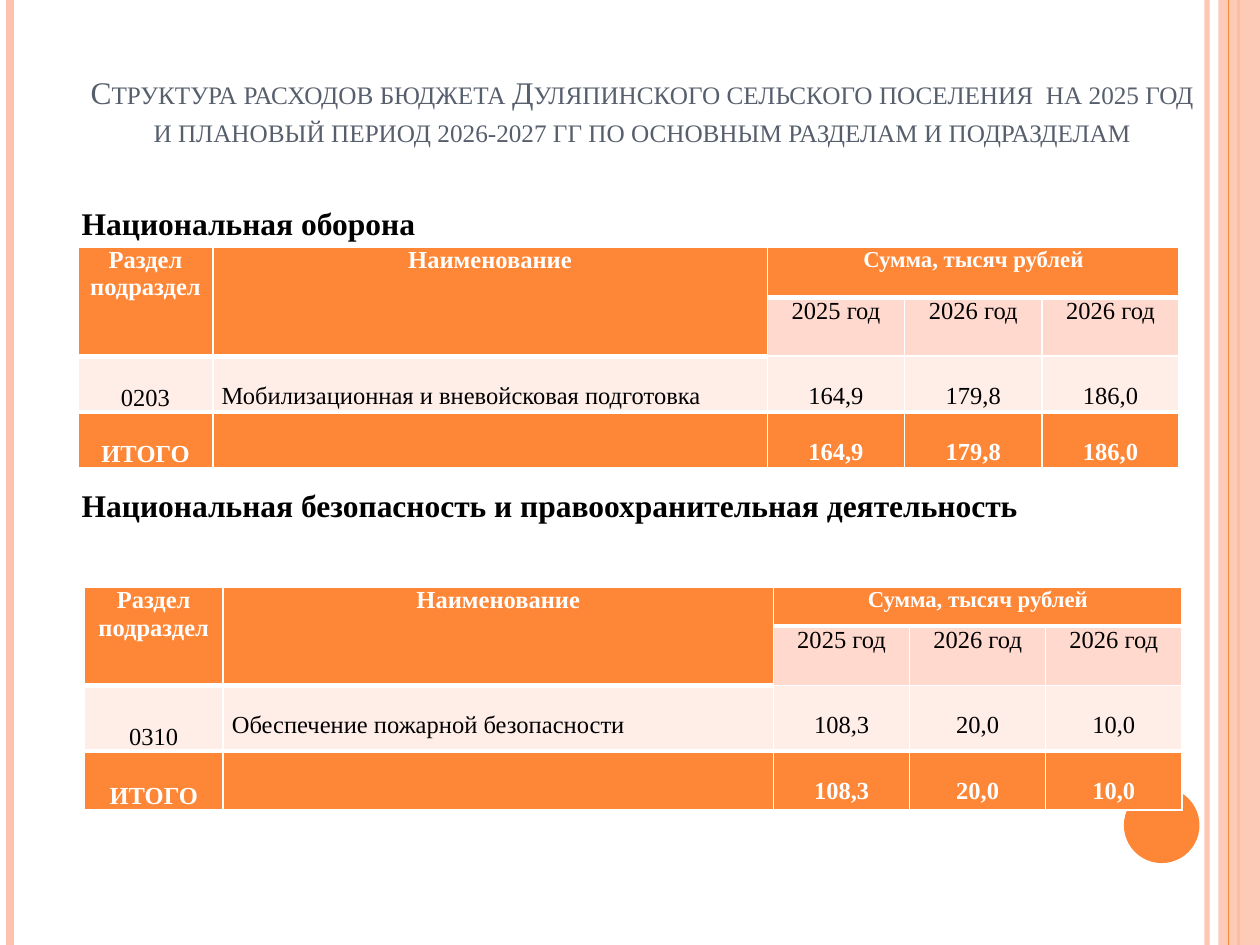
from lxml import etree
from pptx import Presentation
from pptx.dml.color import RGBColor
from pptx.enum.shapes import MSO_CONNECTOR, MSO_SHAPE
from pptx.enum.text import MSO_ANCHOR, PP_ALIGN
from pptx.oxml.ns import qn
from pptx.util import Inches, Pt

COLORS = {
    "orange": "FE8637", "peach": "FEC3AE", "year": "FFD9CE", "row": "FFEDE8",
    "title": "575F6D", "black": "000000", "white": "FFFFFF",
}


class SlideBuilder:
    font = "Times New Roman"

    def __init__(self, slide):
        self.s = slide

    def rgb(self, name):
        return RGBColor.from_string(COLORS[name])

    def set_alpha(self, sp, percent):
        for clr in sp._element.spPr.iter(qn("a:srgbClr")):
            etree.SubElement(clr, qn("a:alpha")).set("val", str(percent * 1000))

    def vline(self, x, color, width, alpha=100):
        cn = self.s.shapes.add_connector(
            MSO_CONNECTOR.STRAIGHT, Inches(x), 0, Inches(x), Inches(7.5))
        cn.line.color.rgb = self.rgb(color)
        cn.line.width = Pt(width)
        etree.SubElement(cn._element.spPr, qn("a:effectLst"))
        if alpha < 100:
            self.set_alpha(cn, alpha)

    def shape(self, kind, box, color, alpha=100):
        sp = self.s.shapes.add_shape(kind, *map(Inches, box))
        sp.shadow.inherit = False
        sp.fill.solid()
        sp.fill.fore_color.rgb = self.rgb(color)
        sp.line.fill.background()
        if alpha < 100:
            self.set_alpha(sp, alpha)

    def run(self, p, text, size, color, bold=False):
        r = p.add_run()
        r.text = text
        r.font.name = self.font
        r.font.size = Pt(size)
        r.font.bold = bold
        r.font.color.rgb = self.rgb(color)
        return r

    def textbox(self, box, text, color="black", bold=True, wrap=False):
        tf = self.s.shapes.add_textbox(*map(Inches, box)).text_frame
        tf.word_wrap = wrap
        return tf, self.run(tf.paragraphs[0], text, 18, color, bold)

    def title(self, box, text):
        tf, r = self.textbox(box, text, "title", False, True)
        tf.vertical_anchor = MSO_ANCHOR.BOTTOM
        tf.margin_left = tf.margin_right = Inches(0.07)
        tf.paragraphs[0].alignment = PP_ALIGN.CENTER
        r.font._element.set("cap", "small")

    def borders(self, cell, top=1, bottom=1):
        widths = {"lnL": 1, "lnR": 1, "lnT": top, "lnB": bottom}
        for i, (side, width) in enumerate(widths.items()):
            ln = etree.Element(qn(f"a:{side}"), w=str(Pt(width)))
            fill = etree.SubElement(ln, qn("a:solidFill"))
            etree.SubElement(fill, qn("a:srgbClr")).set("val", COLORS["white"])
            cell._tc.get_or_add_tcPr().insert(i, ln)

    def cell(self, cell, text, fill, size=14, color="black", bold=False,
             align=PP_ALIGN.CENTER, anchor=MSO_ANCHOR.TOP, drop=0, **edges):
        cell.fill.solid()
        cell.fill.fore_color.rgb = self.rgb(fill)
        cell.margin_left = cell.margin_right = Inches(0.07)
        cell.margin_top, cell.margin_bottom = Inches(drop), 0
        cell.vertical_anchor = anchor
        p = cell.text_frame.paragraphs[0]
        p.alignment = align
        if text:
            self.run(p, text, size, color, bold)
        self.borders(cell, **edges)

    def budget_table(self, left, top, cols, rows, code, name, sums):
        tbl = self.s.shapes.add_table(
            len(rows), len(cols), Inches(left), Inches(top),
            Inches(sum(cols)), Inches(sum(rows))).table
        tbl.horz_banding = False
        for col, width in zip(tbl.columns, cols):
            col.width = Inches(width)
        for row, height in zip(tbl.rows, rows):
            row.height = Inches(height)

        # Header: two tall cells and one wide cell above the years
        head = dict(fill="orange", color="white", bold=True)
        labels = ["Раздел подраздел", "Наименование", "Сумма, тысяч рублей", "", ""]
        for c, label in enumerate(labels):
            self.cell(tbl.cell(0, c), label, size=14 if c < 2 else 13, bottom=3, **head)
        for c, year in enumerate(["", "", "2025 год", "2026 год", "2026 год"]):
            if c < 2:
                self.cell(tbl.cell(1, c), year, bottom=3, **head)
                tbl.cell(0, c).merge(tbl.cell(1, c))
            else:
                self.cell(tbl.cell(1, c), year, "year", top=3)
        tbl.cell(0, 2).merge(tbl.cell(0, 4))

        # Item and total rows: values sit one line below the top edge
        low = dict(anchor=MSO_ANCHOR.BOTTOM)
        line = dict(drop=0.21)
        self.cell(tbl.cell(2, 0), code, "row", top=3, bottom=3, **low)
        self.cell(tbl.cell(2, 1), name, "row", align=PP_ALIGN.LEFT,
                  top=3, bottom=3, **line)
        self.cell(tbl.cell(3, 0), "ИТОГО", top=3, **head, **low)
        self.cell(tbl.cell(3, 1), "", top=3, **head)
        for c, value in enumerate(sums, 2):
            self.cell(tbl.cell(2, c), value, "row", bottom=3, **line)
            self.cell(tbl.cell(3, c), value, top=3, **head, **line)


def main():
    prs = Presentation()
    prs.slide_width, prs.slide_height = Inches(10), Inches(7.5)
    b = SlideBuilder(prs.slides.add_slide(prs.slide_layouts[6]))

    # Side stripes and circle
    b.vline(9.58, "peach", 3, 93)
    b.vline(0.08, "peach", 4.5)
    b.vline(9.83, "orange", 1.5)
    b.shape(MSO_SHAPE.RECTANGLE, (9.67, 0, 0.33, 7.5), "peach", 87)
    b.vline(9.75, "orange", 0.75)
    b.shape(MSO_SHAPE.OVAL, (8.92, 6.25, 0.6, 0.6), "orange")

    b.title((0.62, 0.55, 8.95, 0.68),
            "Структура расходов бюджета Дуляпинского сельского поселения  на 2025 год "
            "и плановый период 2026-2027 гг по основным разделам и подразделам")

    # National defence
    b.budget_table(0.62, 1.96, [1.07, 4.4] + [1.09] * 3, [0.4] + [0.43] * 3,
                   "0203", "Мобилизационная и вневойсковая подготовка",
                   ["164,9", "179,8", "186,0"])
    b.textbox((0.55, 1.57, 2.88, 0.4), "Национальная оборона")

    # National security
    b.budget_table(0.67, 4.66, [1.1, 4.37] + [1.08] * 3, [0.31, 0.47, 0.52, 0.47],
                   "0310", "Обеспечение пожарной безопасности",
                   ["108,3", "20,0", "10,0"])
    b.textbox((0.55, 3.81, 7.71, 0.4),
              "Национальная безопасность и правоохранительная деятельность")

    prs.save("out.pptx")


if __name__ == "__main__":
    main()
